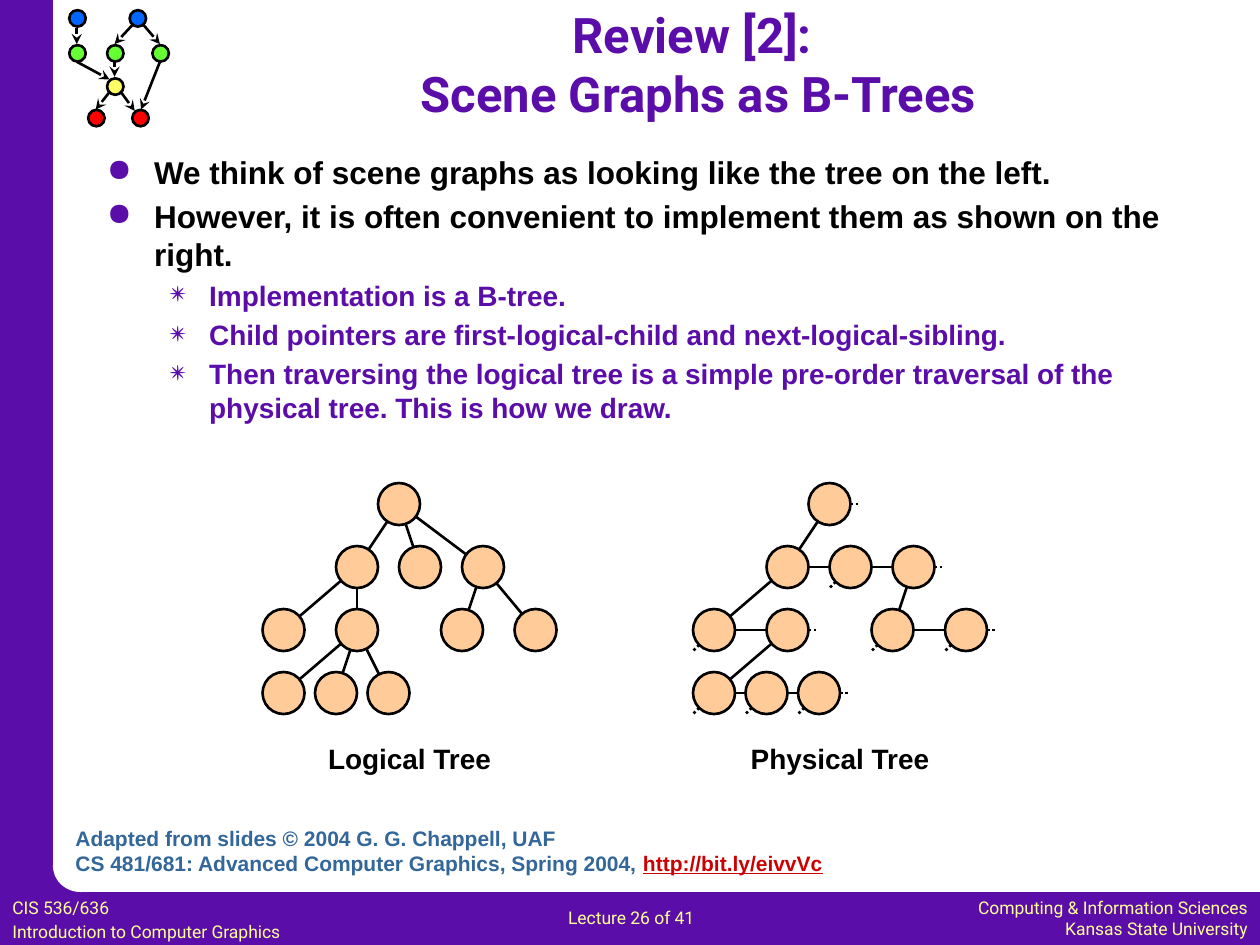
from lxml.etree import SubElement
from pptx import Presentation
from pptx.dml.color import RGBColor
from pptx.enum.dml import MSO_LINE
from pptx.enum.shapes import MSO_CONNECTOR, MSO_SHAPE
from pptx.enum.text import MSO_ANCHOR, PP_ALIGN
from pptx.oxml.ns import qn
from pptx.util import Pt

COLORS = {
    "purple": "5B0DAA", "white": "FFFFFF", "black": "000000", "cream": "FFFF99",
    "peach": "FFCC99", "blue": "0066FF", "green": "66FF33", "yellow": "FFFF66",
    "red": "FF0000", "steel": "336699", "link": "CC0000",
}
NODE_SIZE = 24
TREE_NODES = {
    "root": (78, 12),
    "a": (54, 48), "b": (90, 48), "c": (126, 48),
    "a1": (12, 84), "a2": (54, 84), "c1": (114, 84), "c2": (156, 84),
    "a2x": (12, 120), "a2y": (42, 120), "a2z": (72, 120),
}
TREE_CHILDREN = {
    "root": ["a", "b", "c"], "a": ["a1", "a2"],
    "c": ["c1", "c2"], "a2": ["a2x", "a2y", "a2z"],
}


def rgb(name):
    """Return the named colour."""
    return RGBColor.from_string(COLORS[name])


def add_filled(slide, kind, box, color, outlined=False):
    """Add a filled preset shape, with a black outline if asked."""
    shape = slide.shapes.add_shape(kind, *map(Pt, box))
    shape.shadow.inherit = False
    shape.fill.solid()
    shape.fill.fore_color.rgb = rgb(color)
    if outlined:
        shape.line.color.rgb = rgb("black")
        shape.line.width = Pt(1.5)
    else:
        shape.line.fill.background()


def add_line(slide, start, end, dotted=False, arrow=False):
    """Add a black line between two points."""
    line = slide.shapes.add_connector(MSO_CONNECTOR.STRAIGHT, *map(Pt, (*start, *end)))
    line.line.color.rgb = rgb("black")
    line.line.width = Pt(1.5)
    if dotted:
        line.line.dash_style = MSO_LINE.ROUND_DOT
    properties = line._element.spPr
    if arrow:
        SubElement(properties.find(qn("a:ln")), qn("a:tailEnd"), type="stealth")
    SubElement(properties, qn("a:effectLst"))


def add_run(paragraph, text, size, color, font="Arial", bold=True, underline=None):
    """Add one formatted run."""
    run = paragraph.add_run()
    run.text = text
    run.font.name = font
    run.font.size = Pt(size)
    run.font.bold = bold
    run.font.underline = underline
    run.font.color.rgb = rgb(color)


def add_text(slide, box, lines, size, color, font="Arial", bold=True,
             align=PP_ALIGN.LEFT, space=0, anchor=MSO_ANCHOR.TOP):
    """Add a text box with one run per line and return its frame."""
    frame = slide.shapes.add_textbox(*map(Pt, box)).text_frame
    frame.word_wrap = True
    frame.vertical_anchor = anchor
    for index, text in enumerate(lines):
        paragraph = frame.add_paragraph() if index else frame.paragraphs[0]
        paragraph.alignment = align
        paragraph.space_before = Pt(space if index else 0)
        add_run(paragraph, text, size, color, font, bold)
    return frame


def add_border(slide, box):
    """Draw the side bar, the bottom bar and the rounded inner corner."""
    left, top, width, height = box
    bar = 30.25
    bottom = top + height - bar
    add_filled(slide, MSO_SHAPE.RECTANGLE, (left, bottom, width, bar), "purple")
    add_filled(slide, MSO_SHAPE.RECTANGLE, (left, top, bar, height), "purple")
    add_filled(slide, MSO_SHAPE.RECTANGLE, (left + 14.5, bottom - 16.5, 31.5, 31.5), "purple")
    add_filled(slide, MSO_SHAPE.OVAL, (left + bar, bottom - 30, 31.5, 30), "white")


def add_footer(slide, box):
    """Write the course, lecture number and department."""
    left, top, width, height = box
    style = dict(size=10, color="cream", font="Roboto", bold=False)
    add_text(slide, (left + width - 203, top, 203, height),
             ["Computing & Information Sciences", "Kansas State University"],
             align=PP_ALIGN.RIGHT, **style)
    add_text(slide, (left, top, 212, height),
             ["CIS 536/636", "Introduction to Computer Graphics"], space=2, **style)
    add_text(slide, (left + 317.5, top + 6, 110, 19), ["Lecture 26 of 41"], **style)


def add_emblem(slide, box):
    """Draw the small directed graph in the corner."""
    left, top, size = box
    nodes = {
        "blue": [(0, 0), (34.5, 0)],
        "green": [(0, 20), (21.6, 20), (47.5, 20)],
        "yellow": [(21.6, 39)],
        "red": [(10.8, 57), (36, 57)],
    }
    edges = [
        (4.3, 10, 4.3, 19.4), (36, 8.6, 25.9, 19.4), (42.5, 8.6, 51.8, 19.4),
        (4.3, 29.5, 23, 39.6), (25.9, 29.5, 25.9, 38.1), (51.8, 29.5, 41, 56.8),
        (29.5, 46.8, 37.4, 57.6), (23, 46.8, 15.1, 56.8),
    ]
    for color, places in nodes.items():
        for x, y in places:
            add_filled(slide, MSO_SHAPE.OVAL, (left + x, top + y, size, size), color, True)
    for x1, y1, x2, y2 in edges:
        add_line(slide, (left + x1, top + y1), (left + x2, top + y2), arrow=True)


def add_body(slide, box):
    """Write the two-level bullet list."""
    items = [
        (0, "We think of scene graphs as looking like the tree on the left."),
        (0, "However, it is often convenient to implement them as shown on the right."),
        (1, "Implementation is a B-tree."),
        (1, "Child pointers are first-logical-child and next-logical-sibling."),
        (1, "Then traversing the logical tree is a simple pre-order traversal of the "
            "physical tree. This is how we draw."),
    ]
    levels = [("●", 27, -27, 18, "black"), ("✴", 58.5, -22.5, 16, "purple")]
    frame = slide.shapes.add_textbox(*map(Pt, box)).text_frame
    frame.word_wrap = True
    for index, (level, text) in enumerate(items):
        symbol, margin, indent, size, color = levels[level]
        paragraph = frame.add_paragraph() if index else frame.paragraphs[0]
        paragraph.level = level
        properties = paragraph._p.get_or_add_pPr()
        properties.set("marL", str(Pt(margin)))
        properties.set("indent", str(Pt(indent)))
        bullet_color = SubElement(properties, qn("a:buClr"))
        SubElement(bullet_color, qn("a:srgbClr"), val=COLORS["purple"])
        SubElement(properties, qn("a:buChar"), char=symbol)
        paragraph.space_before = Pt(size * 0.2 if index else 0)
        add_run(paragraph, text, size, color)


def add_tree(slide, box, caption, physical=False):
    """Draw the tree by child links, or by first-child and next-sibling links."""
    left, top, width, height = box
    centers = {name: (left + x, top + y) for name, (x, y) in TREE_NODES.items()}
    for parent, children in TREE_CHILDREN.items():
        sources = [parent, *children] if physical else [parent] * len(children)
        for source, child in zip(sources, children):
            add_line(slide, centers[source], centers[child])
    if physical:
        last_siblings = ["root", *(children[-1] for children in TREE_CHILDREN.values())]
        for name, (x, y) in centers.items():
            if name in last_siblings:
                add_line(slide, (x, y), (x + 18, y), dotted=True)
            if name not in TREE_CHILDREN:
                add_line(slide, (x, y), (x - 12, y + 12), dotted=True)
    for x, y in centers.values():
        corner = (x - NODE_SIZE / 2, y - NODE_SIZE / 2)
        add_filled(slide, MSO_SHAPE.OVAL, (*corner, NODE_SIZE, NODE_SIZE), "peach", True)
    add_text(slide, (left + 18, top + height - 26.5, width - 36, 26.5), [caption],
             16, "black", align=PP_ALIGN.CENTER)


def add_credit(slide, box):
    """Write the source credit with its address."""
    frame = add_text(slide, box, [
        "Adapted from slides © 2004 G. G. Chappell, UAF",
        "CS 481/681: Advanced Computer Graphics, Spring 2004, ",
    ], 12, "steel")
    add_run(frame.paragraphs[-1], "http://bit.ly/eivvVc", 12, "link", underline=True)


def main():
    """Build and save the slide."""
    presentation = Presentation()
    presentation.slide_width, presentation.slide_height = Pt(720), Pt(540)
    slide = presentation.slides.add_slide(presentation.slide_layouts[6])
    add_border(slide, (0, 0, 720, 540))
    add_footer(slide, (0, 509, 720, 31))
    add_emblem(slide, (39.6, 5.8, 9.4))
    add_body(slide, (54, 84, 625.5, 372))
    add_tree(slide, (150, 276, 168, 170.5), "Logical Tree")
    add_tree(slide, (396, 276, 168, 170.5), "Physical Tree", physical=True)
    add_text(slide, (90, 6, 618, 60), ["Review [2]: ", "Scene Graphs as B-Trees"],
             28, "purple", "Roboto", align=PP_ALIGN.CENTER, anchor=MSO_ANCHOR.MIDDLE)
    add_credit(slide, (36, 468, 455, 36))
    presentation.save("out.pptx")


if __name__ == "__main__":
    main()
